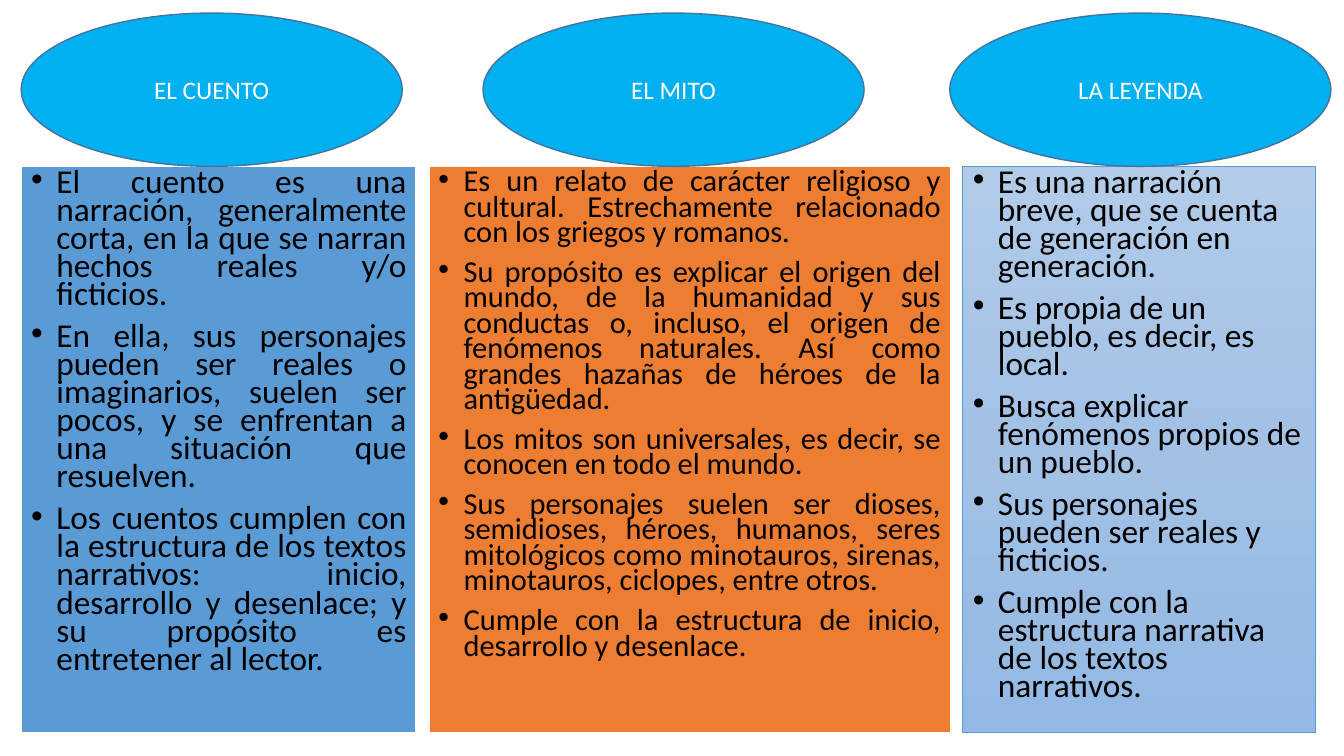
import copy

import pptx
import pptx.dml.color
import pptx.enum.shapes
import pptx.enum.text
import pptx.oxml
import pptx.oxml.ns
import pptx.util

Inches, Pt = pptx.util.Inches, pptx.util.Pt
ALIGN = pptx.enum.text.PP_ALIGN
ANCHOR = pptx.enum.text.MSO_ANCHOR
SHAPE = pptx.enum.shapes.MSO_SHAPE

# Content: one entry per kind of story
GENRES = [
    ("EL CUENTO", [
        "El cuento es una narración, generalmente corta, en la que se narran hechos reales y/o ficticios.",
        "En ella, sus personajes pueden ser reales o imaginarios, suelen ser pocos, y se enfrentan a una "
        "situación que resuelven.",
        "Los cuentos cumplen con la estructura de los textos narrativos: inicio, desarrollo y desenlace; "
        "y su propósito es entretener al lector.",
    ]),
    ("EL MITO", [
        "Es un relato de carácter religioso y cultural. Estrechamente relacionado con los griegos y romanos.",
        "Su propósito es explicar el origen del mundo, de la humanidad y sus conductas o, incluso, el origen "
        "de fenómenos naturales. Así como grandes hazañas de héroes de la antigüedad.",
        "Los mitos son universales, es decir, se conocen en todo el mundo.",
        "Sus personajes suelen ser dioses, semidioses, héroes, humanos, seres mitológicos como minotauros, "
        "sirenas, minotauros, ciclopes, entre otros.",
        "Cumple con la estructura de inicio, desarrollo y desenlace.",
    ]),
    ("LA LEYENDA", [
        "Es una narración breve, que se cuenta de generación en generación.",
        "Es propia de un pueblo, es decir, es local.",
        "Busca explicar fenómenos propios de un pueblo.",
        "Sus personajes pueden ser reales y ficticios.",
        "Cumple con la estructura narrativa de los textos narrativos.",
    ]),
]

THEME = {
    "font": "Calibri", "ink": "000000", "heading_ink": "FFFFFF", "heading_size": 18,
    "heading_fill": ["00B0F0"], "heading_line": ("43739E", 1),
    "columns": [
        {"fill": ["5B9BD5"], "line": ("FFFFFF", 1.5), "size": 23.8, "align": ALIGN.JUSTIFY},
        {"fill": ["ED7D31"], "line": ("FFFFFF", 1.5), "size": 21.7, "align": ALIGN.JUSTIFY},
        {"fill": ["B1CBE9", "A3C1E5", "93B9E4"], "line": ("5B9BD5", 0.5), "size": 23.8,
         "align": ALIGN.LEFT},
    ],
}

# Layout in inches
SLIDE_WIDTH, SLIDE_HEIGHT = 13.33, 7.5
MARGIN, GAP = 0.21, 0.12
COLUMN_WIDTHS = [3.92, 5.18, 3.5]
COLUMN_HEIGHT = 5.62
HEADING_LEFTS = [MARGIN, 4.79, 9.42]
HEADING_TOP, HEADING_WIDTH, HEADING_HEIGHT = 0.13, 3.78, 1.52
COLUMN_TOP = HEADING_TOP + HEADING_HEIGHT


def rgb(value):
    return pptx.dml.color.RGBColor.from_string(value)


def paint(shape, colours, line):
    """Fill with one colour, or with a downward gradient of three."""
    if len(colours) == 1:
        shape.fill.solid()
        shape.fill.fore_color.rgb = rgb(colours[0])
    else:
        shape.fill.gradient()
        shape.fill.gradient_angle = 270
        stops = shape.element.spPr.find(".//" + pptx.oxml.ns.qn("a:gsLst"))
        stops.insert(1, copy.deepcopy(stops[0]))
        for index, (stop, colour) in enumerate(zip(shape.fill.gradient_stops, colours)):
            stop.position = index / (len(colours) - 1)
            stop.color.rgb = rgb(colour)
    shape.line.color.rgb = rgb(line[0])
    shape.line.width = Pt(line[1])


def add_bullet(paragraph):
    properties = paragraph._p.get_or_add_pPr()
    properties.set("marL", str(Inches(0.25)))
    properties.set("indent", str(-Inches(0.25)))
    namespace = pptx.oxml.ns.nsdecls("a")
    properties.append(pptx.oxml.parse_xml(f'<a:buFont {namespace} typeface="Arial"/>'))
    properties.append(pptx.oxml.parse_xml(f'<a:buChar {namespace} char="•"/>'))


def write(shape, texts, size, colour, align, anchor, bullets=False):
    frame = shape.text_frame
    frame.word_wrap = True
    frame.auto_size = pptx.enum.text.MSO_AUTO_SIZE.NONE
    frame.vertical_anchor = anchor
    for index, text in enumerate(texts):
        paragraph = frame.add_paragraph() if index else frame.paragraphs[0]
        paragraph.text = text
        paragraph.alignment = align
        paragraph.space_before = Pt(10 if index else 0)
        if bullets:
            paragraph.line_spacing = 0.7
            add_bullet(paragraph)
        font = paragraph.runs[0].font
        font.name, font.size = THEME["font"], Pt(size)
        font.color.rgb = rgb(colour)


def add_shape(slide, kind, box):
    shape = slide.shapes.add_shape(kind, *map(Inches, box))
    shape.shadow.inherit = False
    return shape


def main():
    deck = pptx.Presentation()
    deck.slide_width, deck.slide_height = Inches(SLIDE_WIDTH), Inches(SLIDE_HEIGHT)
    slide = deck.slides.add_slide(deck.slide_layouts[1])
    empty_title = slide.shapes.title.element
    empty_title.getparent().remove(empty_title)

    # Description columns; the first is the body placeholder
    for index, ((_, points), style) in enumerate(zip(GENRES, THEME["columns"])):
        left = MARGIN + sum(COLUMN_WIDTHS[:index]) + GAP * index
        box = (left, COLUMN_TOP, COLUMN_WIDTHS[index], COLUMN_HEIGHT)
        if index == 0:
            column = slide.placeholders[1]
            column.left, column.top, column.width, column.height = map(Inches, box)
        else:
            column = add_shape(slide, SHAPE.RECTANGLE, box)
        paint(column, style["fill"], style["line"])
        write(column, points, size=style["size"], colour=THEME["ink"],
              align=style["align"], anchor=ANCHOR.TOP, bullets=True)

    # Oval headings
    for (name, _), left in zip(GENRES, HEADING_LEFTS):
        heading = add_shape(slide, SHAPE.OVAL, (left, HEADING_TOP, HEADING_WIDTH, HEADING_HEIGHT))
        paint(heading, THEME["heading_fill"], THEME["heading_line"])
        write(heading, [name], size=THEME["heading_size"], colour=THEME["heading_ink"],
              align=ALIGN.CENTER, anchor=ANCHOR.MIDDLE)

    deck.save("out.pptx")


if __name__ == "__main__":
    main()
